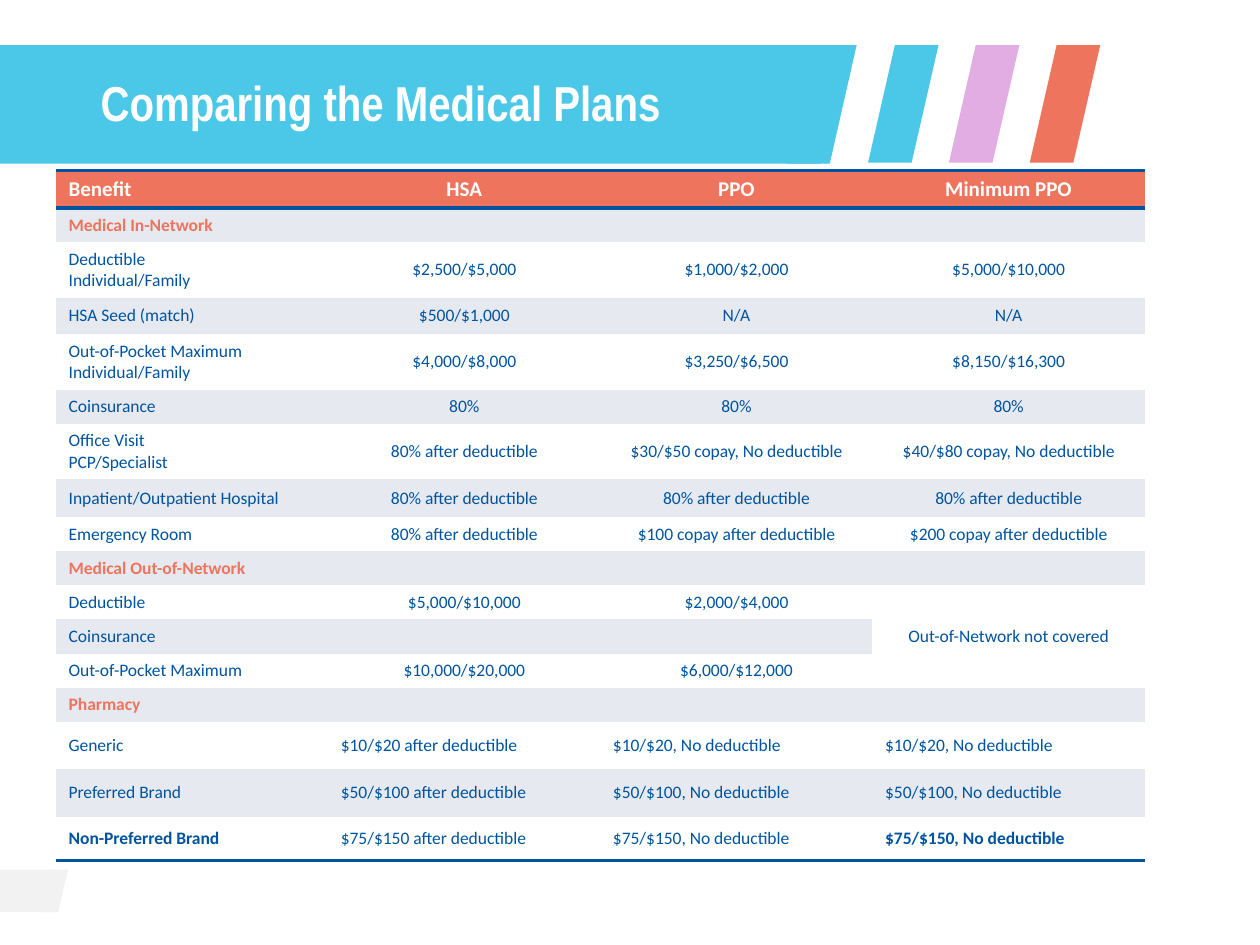
from dataclasses import dataclass

import pptx
import pptx.dml.color
import pptx.enum.shapes
import pptx.enum.text
import pptx.oxml.ns
import pptx.util
from lxml import etree

Cm = pptx.util.Cm
Pt = pptx.util.Pt
RGBColor = pptx.dml.color.RGBColor
KIND = pptx.enum.shapes.MSO_SHAPE
ALIGN = pptx.enum.text.PP_ALIGN
MIDDLE = pptx.enum.text.MSO_ANCHOR.MIDDLE
qn = pptx.oxml.ns.qn

WHITE = RGBColor(0xFF, 0xFF, 0xFF)
PALE = RGBColor(0xF2, 0xF2, 0xF2)
GREY = RGBColor(0xE7, 0xE9, 0xF0)
CYAN = RGBColor(0x4B, 0xC7, 0xE7)
LILAC = RGBColor(0xE2, 0xAD, 0xE3)
CORAL = RGBColor(0xEE, 0x74, 0x5D)
NAVY = RGBColor(0x00, 0x54, 0x9F)

PLAIN_STYLE = "{2D5ABB26-0587-4C30-8999-92F81FD0307C}"
SLANT = 0.381


@dataclass
class Block:
    left: float
    top: float
    width: float
    height: float
    color: RGBColor
    slant: bool = False


@dataclass
class Row:
    height: float
    texts: list[str]
    head: bool = False  # section heading across all columns
    center: bool = True
    bold: tuple[int, ...] = ()


BLOCKS = [
    Block(0.86, 17.53, 0.51, 0.86, PALE, slant=True),
    Block(0, 17.53, 1.12, 0.86, PALE),
    Block(-0.46, 0.91, 17.02, 2.39, CYAN),
    Block(15.85, 0.91, 1.42, 2.39, CYAN, slant=True),
] + [
    Block(17.5 + 1.63 * i, 0.91, 1.42, 2.37, color, slant=True)
    for i, color in enumerate((CYAN, LILAC, CORAL))
]

LINE, PAIR = 0.69, 1.12  # heights of one-line and two-line rows
AFTER = "80% after deductible"
ROWS = [
    Row(0.76, ["Benefit", "HSA", "PPO", "Minimum PPO"], bold=(0, 1, 2, 3)),
    Row(LINE, ["Medical In-Network"], head=True),
    Row(PAIR, ["Deductible\nIndividual/Family", "$2,500/$5,000",
               "$1,000/$2,000", "$5,000/$10,000"]),
    Row(0.73, ["HSA Seed (match)", "$500/$1,000", "N/A", "N/A"]),
    Row(PAIR, ["Out-of-Pocket Maximum\nIndividual/Family", "$4,000/$8,000",
               "$3,250/$6,500", "$8,150/$16,300"]),
    Row(LINE, ["Coinsurance", "80%", "80%", "80%"]),
    Row(PAIR, ["Office Visit\nPCP/Specialist", AFTER,
               "$30/$50 copay, No deductible", "$40/$80 copay, No deductible"]),
    Row(0.76, ["Inpatient/Outpatient Hospital", AFTER, AFTER, AFTER]),
    Row(LINE, ["Emergency Room", AFTER,
               "$100 copay after deductible", "$200 copay after deductible"]),
    Row(LINE, ["Medical Out-of-Network"], head=True),
    Row(LINE, ["Deductible", "$5,000/$10,000", "$2,000/$4,000",
               "Out-of-Network not covered"]),
    Row(LINE, ["Coinsurance"]),
    Row(LINE, ["Out-of-Pocket Maximum", "$10,000/$20,000", "$6,000/$12,000"]),
    Row(LINE, ["Pharmacy"], head=True),
    Row(0.94, ["Generic", "$10/$20 after deductible",
               "$10/$20, No deductible", "$10/$20, No deductible"], center=False),
    Row(0.97, ["Preferred Brand", "$50/$100 after deductible",
               "$50/$100, No deductible", "$50/$100, No deductible"], center=False),
    Row(0.89, ["Non-Preferred Brand", "$75/$150 after deductible",
               "$75/$150, No deductible", "$75/$150, No deductible"],
        center=False, bold=(0, 3)),
]
COLS = 4
SPAN = (10, 12)  # rows joined in the last column


def write(frame, text: str, *, size: int = 10, color: RGBColor = NAVY,
          bold: bool = False, font: str = "Calibri", align=ALIGN.LEFT,
          space: float | None = None) -> None:
    """Fill a text frame, one paragraph per line of text."""
    for i, line in enumerate(text.split("\n")):
        para = frame.paragraphs[0] if i == 0 else frame.add_paragraph()
        para.alignment = align
        para.line_spacing = space
        if not line:  # keeps an empty cell as low as the others
            etree.SubElement(para._p, qn("a:endParaRPr"), sz=str(size * 100))
            continue
        run = para.add_run()
        run.text = line
        run.font.size = Pt(size)
        run.font.name = font
        run.font.bold = bold
        run.font.color.rgb = color


def draw(slide, block: Block) -> None:
    kind = KIND.PARALLELOGRAM if block.slant else KIND.RECTANGLE
    shape = slide.shapes.add_shape(kind, Cm(block.left), Cm(block.top),
                                   Cm(block.width), Cm(block.height))
    if block.slant:
        shape.adjustments[0] = SLANT
    shape.shadow.inherit = False
    shape.fill.solid()
    shape.fill.fore_color.rgb = block.color
    shape.line.fill.background()


def rule(cell, *sides: str) -> None:
    """Draw navy borders on the given sides; call after the fill is set."""
    props = cell._tc.get_or_add_tcPr()
    for i, side in enumerate(sides):
        line = etree.Element(qn(f"a:ln{side}"), w=str(Pt(2)))
        solid = etree.SubElement(line, qn("a:solidFill"))
        etree.SubElement(solid, qn("a:srgbClr"), val=str(NAVY))
        props.insert(i, line)


def add_plans(slide) -> None:
    high = sum(row.height for row in ROWS)
    frame = slide.shapes.add_table(len(ROWS), COLS, Cm(1.13), Cm(3.43),
                                   Cm(21.95), Cm(high))
    table = frame.table
    table.horz_banding = False
    frame._element.find(".//" + qn("a:tableStyleId")).text = PLAIN_STYLE
    for col in table.columns:
        col.width = Cm(5.486)
    for r, row in enumerate(ROWS):
        table.rows[r].height = Cm(row.height)
        top = r == 0
        for c in range(COLS):
            cell = table.cell(r, c)
            cell.vertical_anchor = MIDDLE
            cell.fill.solid()
            cell.fill.fore_color.rgb = CORAL if top else GREY if r % 2 else WHITE
            write(cell.text_frame, row.texts[c] if c < len(row.texts) else "",
                  size=12 if top else 10,
                  color=WHITE if top else CORAL if row.head else NAVY,
                  bold=row.head or c in row.bold,
                  align=ALIGN.CENTER if row.center and c else ALIGN.LEFT)
            if top:
                rule(cell, "T", "B")
            elif r == len(ROWS) - 1:
                rule(cell, "B")
        if row.head:
            table.cell(r, 0).merge(table.cell(r, COLS - 1))
    table.cell(SPAN[0], COLS - 1).merge(table.cell(SPAN[1], COLS - 1))


def main() -> None:
    deck = pptx.Presentation()
    deck.slide_width, deck.slide_height = Cm(25.4), Cm(19.05)
    slide = deck.slides.add_slide(deck.slide_layouts[6])
    for block in BLOCKS:
        draw(slide, block)
    title = slide.shapes.add_textbox(Cm(1.78), Cm(1.55), Cm(14.81), Cm(1.14))
    title.text_frame.word_wrap = True
    title.text_frame.vertical_anchor = MIDDLE
    write(title.text_frame, "Comparing the Medical Plans", size=28, color=WHITE,
          bold=True, font="Arial Narrow", space=0.9)
    add_plans(slide)
    deck.save("out.pptx")


if __name__ == "__main__":
    main()
